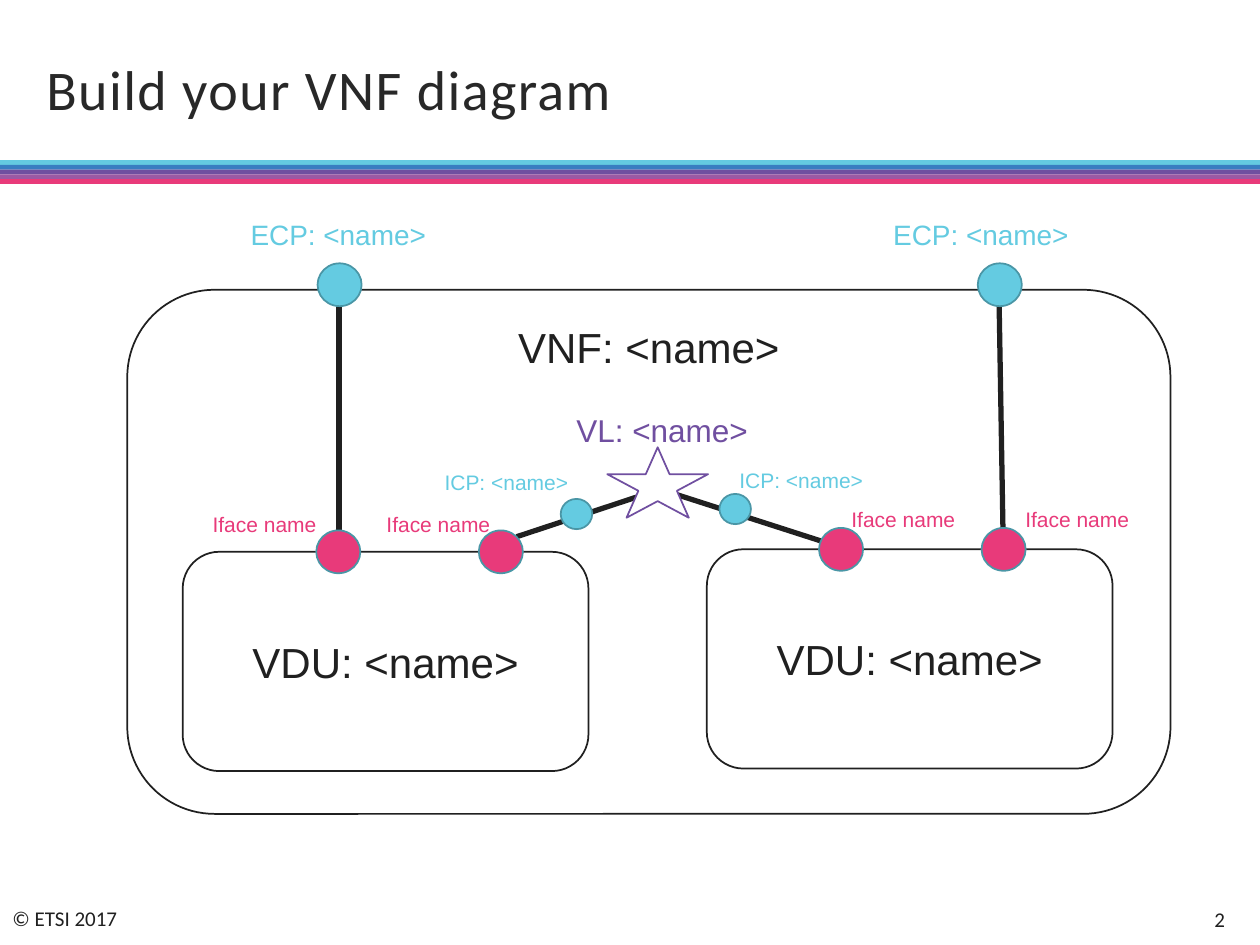
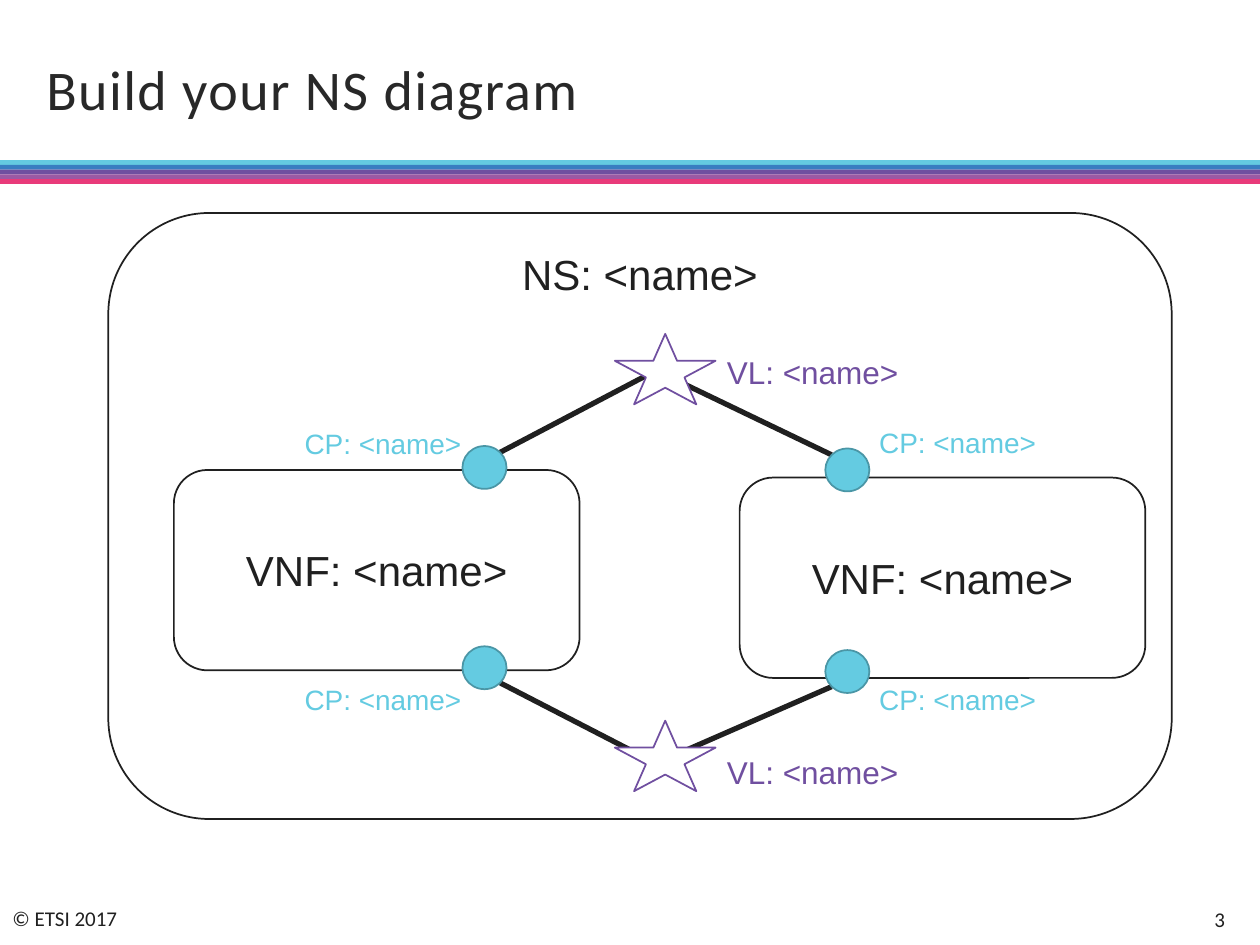
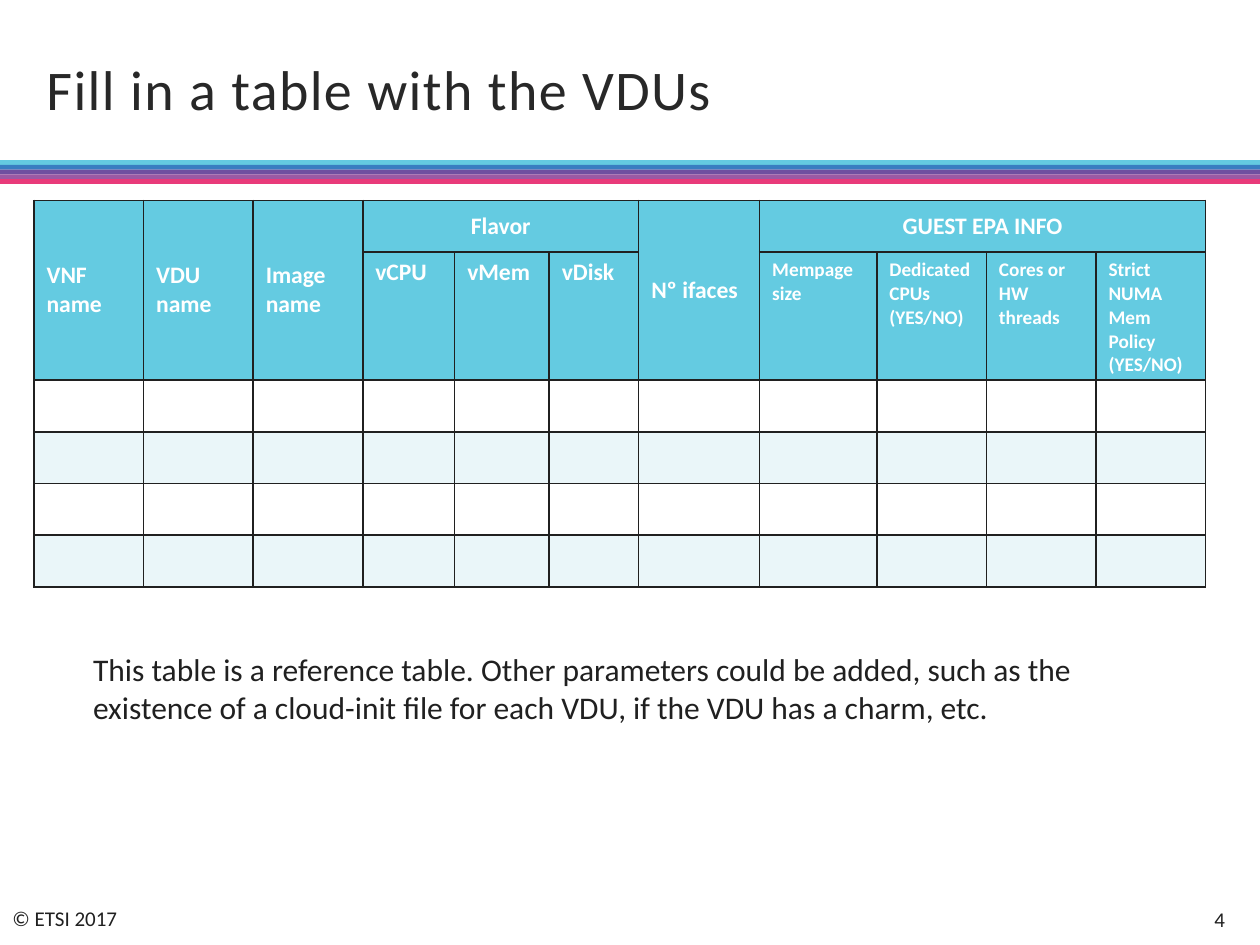
from dataclasses import dataclass

from lxml import etree
from pptx import Presentation
from pptx.dml.color import RGBColor
from pptx.enum.shapes import MSO_CONNECTOR, MSO_SHAPE
from pptx.enum.text import MSO_ANCHOR, PP_ALIGN
from pptx.oxml.ns import qn
from pptx.util import Inches, Pt

LEFT, CENTER, RIGHT = PP_ALIGN.LEFT, PP_ALIGN.CENTER, PP_ALIGN.RIGHT
TOP, MIDDLE = MSO_ANCHOR.TOP, MSO_ANCHOR.MIDDLE
RECTANGLE, ROUNDED = MSO_SHAPE.RECTANGLE, MSO_SHAPE.ROUNDED_RECTANGLE
OVAL, STAR = MSO_SHAPE.OVAL, MSO_SHAPE.STAR_5_POINT
STRAIGHT = MSO_CONNECTOR.STRAIGHT


@dataclass(frozen=True)
class Theme:
    ink: str = "202020"
    title_ink: str = "282828"
    white: str = "FFFFFF"
    cyan: str = "64CBE1"
    cyan_edge: str = "4A96A6"
    blue: str = "397EC1"
    violet: str = "704FA0"
    orchid: str = "9B59A4"
    pink: str = "E83A7A"
    stripe: str = "EAF6F9"
    heading_font: str = "Calibri"
    diagram_font: str = "Arial"
    title: float = 32
    name: float = 24
    body: float = 18
    point: float = 16
    header: float = 13.5
    small: float = 12
    detail: float = 11
    thin: float = 1
    thick: float = 3


THEME = Theme()


@dataclass(frozen=True)
class Box:
    left: float
    top: float
    width: float
    height: float

    def inside(self, left, top, width, height):
        return Box(self.left + left, self.top + top, width, height)

    def lengths(self):
        return [Inches(v) for v in (self.left, self.top, self.width, self.height)]


def style(size, color=THEME.ink, name=THEME.diagram_font, bold=False):
    return {"size": Pt(size), "name": name, "bold": bold, "color": color}


NAME = style(THEME.name)
LINK_NAME = style(THEME.body, THEME.violet)
POINT_NAME = style(THEME.point, THEME.cyan)
INNER_NAME = style(THEME.small, THEME.cyan)
IFACE_NAME = style(THEME.small, THEME.pink)
TITLE = style(THEME.title, THEME.title_ink, THEME.heading_font)
FOOTER = style(THEME.small, name=THEME.heading_font)
BODY = style(THEME.body, name=THEME.heading_font)
HEADER = style(THEME.header, THEME.white, THEME.heading_font, True)
DETAIL = style(THEME.detail, THEME.white, THEME.heading_font, True)

PORT = (0.35, 0.34)
DOT = (0.25, 0.24)
STAR_SIZE = (0.8, 0.56)
IFACE_LABEL = (1.5, 0.3)
CP_LABEL = (1.72, 0.37)


def write(frame, text, look, align=LEFT):
    for index, line in enumerate(text.split("\n")):
        para = frame.add_paragraph() if index else frame.paragraphs[0]
        para.alignment = align
        span = para.add_run()
        span.text = line
        for key, value in look.items():
            if key == "color":
                span.font.color.rgb = RGBColor.from_string(value)
            else:
                setattr(span.font, key, value)
    return frame.paragraphs[0]


def add_label(page, box, text, look, align=CENTER, anchor=TOP, wrap=True):
    frame = page.shapes.add_textbox(*box.lengths()).text_frame
    for key, value in {"word_wrap": wrap, "vertical_anchor": anchor}.items():
        setattr(frame, key, value)
    return write(frame, text, look, align)


def add_figure(page, kind, box, fill, edge=None):
    figure = page.shapes.add_shape(kind, *box.lengths())
    figure.shadow.inherit = False
    figure.fill.solid()
    figure.fill.fore_color.rgb = RGBColor.from_string(fill)
    if edge:
        figure.line.color.rgb = RGBColor.from_string(edge)
        figure.line.width = Pt(THEME.thin)
    else:
        figure.line.fill.background()
    return figure


def add_named_box(page, box, name, anchor=MIDDLE):
    frame = add_figure(page, ROUNDED, box, THEME.white, THEME.ink).text_frame
    frame.vertical_anchor = anchor
    write(frame, name, NAME, CENTER)


def add_link(page, box, start, end):
    points = [Inches(v) for x, y in (start, end) for v in (box.left + x, box.top + y)]
    link = page.shapes.add_connector(STRAIGHT, *points)
    link.line.color.rgb = RGBColor.from_string(THEME.ink)
    link.line.width = Pt(THEME.thick)
    etree.SubElement(link._element.spPr, qn("a:effectLst"))


def add_circle(page, box, place, size, color):
    add_figure(page, OVAL, box.inside(*place, *size), color, THEME.cyan_edge)


def add_star(page, box, place):
    add_figure(page, STAR, box.inside(*place, *STAR_SIZE), THEME.white, THEME.violet)


def draw_network(page, box, name, links, stars):
    add_named_box(page, box, name, TOP)
    for start, end in links:
        add_link(page, box, start, end)
    for place in stars:
        add_star(page, box, place)


def draw_vdu(page, box, port_lefts, label_lefts, label_top):
    add_named_box(page, box, "VDU: <name>")
    for port_left, label_left in zip(port_lefts, label_lefts):
        add_circle(page, box, (port_left, -0.17), PORT, THEME.pink)
        add_label(page, box.inside(label_left, label_top, *IFACE_LABEL),
                  "Iface name", IFACE_NAME)


def draw_vnf(page, box, port_left, port_tops, label_left, label_tops):
    add_named_box(page, box, "VNF: <name>")
    for port_top, label_top in zip(port_tops, label_tops):
        add_circle(page, box, (port_left, port_top), PORT, THEME.cyan)
        add_label(page, box.inside(label_left, label_top, *CP_LABEL),
                  "CP: <name>", POINT_NAME)


def draw_vnf_diagram(page, box):
    links = [((1.68, 1.91), (1.68, 0.13)), ((6.95, 1.89), (6.92, 0.13)),
             ((3.09, 1.96), (4.21, 1.59)), ((5.65, 2.04), (4.25, 1.59))]
    draw_network(page, box, "VNF: <name>", links, [(3.81, 1.25)])
    draw_vdu(page, box.inside(0.44, 2.08, 3.22, 1.74), (1.06, 2.35), (-0.1, 1.28), -0.37)
    draw_vdu(page, box.inside(4.6, 2.06, 3.22, 1.74), (0.89, 2.18), (0.81, 2.19), -0.39)
    add_label(page, box.inside(2.79, 0.91, 2.91, 0.4), "VL: <name>", LINK_NAME)
    for port_left, label_left in ((1.51, 0.73), (6.75, 5.83)):
        add_circle(page, box, (port_left, -0.21), PORT, THEME.cyan)
        add_label(page, box.inside(label_left, -0.62, 1.89, 0.37),
                  "ECP: <name>", POINT_NAME)
    for dot, label in (((3.44, 1.66), (2.42, 1.38)), ((4.7, 1.62), (4.76, 1.36))):
        add_circle(page, box, dot, DOT, THEME.cyan)
        add_label(page, box.inside(*label, 1.19, 0.3),
                  "ICP: <name>", INNER_NAME, LEFT, wrap=False)


def draw_ns_diagram(page, box):
    links = [((3.11, 1.9), (4.29, 1.28)), ((5.74, 1.92), (4.45, 1.3)),
             ((3.11, 3.73), (4.37, 4.38)), ((5.74, 3.76), (4.48, 4.31))]
    draw_network(page, box, "NS: <name>", links, [(4.02, 0.96), (4.02, 4.03)])
    draw_vnf(page, box.inside(0.52, 2.04, 3.22, 1.59),
             2.29, (-0.19, 1.4), 0.8, (-0.39, 1.64))
    draw_vnf(page, box.inside(5.01, 2.1, 3.22, 1.59),
             0.68, (-0.23, 1.37), 0.87, (-0.46, 1.58))
    for top in (1.06, 4.24):
        add_label(page, box.inside(4.81, top, 2.91, 0.4), "VL: <name>", LINK_NAME, LEFT)


def format_cell(cell, fill):
    properties = cell._tc.get_or_add_tcPr()
    for index, side in enumerate(("lnL", "lnR", "lnT", "lnB")):
        border = etree.Element(qn(f"a:{side}"), w=str(Pt(THEME.thin)))
        paint = etree.SubElement(border, qn("a:solidFill"))
        etree.SubElement(paint, qn("a:srgbClr"), val=THEME.ink)
        properties.insert(index, border)
    cell.fill.solid()
    cell.fill.fore_color.rgb = RGBColor.from_string(fill)


def draw_vdu_table(page, box):
    widths = [0.87] * 3 + [0.73, 0.75, 0.71, 0.96, 0.93] + [0.87] * 3
    row_count, header_rows = 6, 2
    table = page.shapes.add_table(row_count, len(widths), *box.lengths()).table
    for column, width in zip(table.columns, widths):
        column.width = Inches(width)
    for index, row in enumerate(table.rows):
        row.height = Inches(0.41)
        body_fill = THEME.stripe if index % 2 else THEME.white
        for cell in row.cells:
            format_cell(cell, THEME.cyan if index < header_rows else body_fill)
    merged = [("VNF name", 0, 1, 0), ("VDU name", 1, 1, 1), ("Image name", 2, 1, 2),
              ("Flavor", 3, 0, 5), ("Nº ifaces", 6, 1, 6), ("GUEST EPA INFO", 7, 0, 10)]
    for text, first, last_row, last in merged:
        cell = table.cell(0, first)
        cell.merge(table.cell(last_row, last))
        cell.vertical_anchor = MIDDLE
        write(cell.text_frame, text, HEADER, CENTER if last > first else LEFT)
    groups = [(3, HEADER, ["vCPU", "vMem", "vDisk"]),
              (7, DETAIL, ["Mempage size", "Dedicated CPUs (YES/NO)", "Cores or HW threads",
                           "Strict NUMA Mem Policy\n(YES/NO)"])]
    for first, look, texts in groups:
        for column, text in enumerate(texts, first):
            write(table.cell(1, column).text_frame, text, look)


def draw_table_page(page, box):
    draw_vdu_table(page, box)
    add_label(page, box.inside(0.37, 3.52, 8.11, 0.71),
              "This table is a reference table. Other parameters could be added, such as the "
              "existence of a cloud-init file for each VDU, if the VDU has a charm, etc.",
              BODY, LEFT)


def draw_bands(page, box):
    colors = (THEME.cyan, THEME.blue, THEME.violet, THEME.orchid, THEME.pink)
    step = box.height / len(colors)
    for index, color in enumerate(colors):
        add_figure(page, RECTANGLE, box.inside(0, index * step, box.width, step), color)


def add_page(deck, title, number):
    page = deck.slides.add_slide(deck.slide_layouts[6])
    draw_bands(page, Box(0, 1.27, 10, 0.19))
    add_label(page, Box(0, 7.14, 1.11, 0.3), "© ETSI 2017", FOOTER, LEFT)
    para = add_label(page, Box(0.27, 0.3, 7.41, 0.87), title, TITLE, LEFT, MIDDLE)
    para.line_spacing = 0.9
    para.runs[0]._r.get_or_add_rPr().set("spc", "80")
    add_label(page, Box(9.29, 7.1, 0.53, 0.39), str(number), FOOTER, RIGHT, MIDDLE)
    return page


def main():
    deck = Presentation()
    deck.slide_width, deck.slide_height = Inches(10), Inches(7.5)
    pages = [
        ("Build your VNF diagram", draw_vnf_diagram, Box(1.01, 2.3, 8.28, 4.16)),
        ("Build your NS diagram", draw_ns_diagram, Box(0.86, 1.69, 8.44, 4.81)),
        ("Fill in a table with the VDUs", draw_table_page, Box(0.27, 1.59, 9.33, 3.04)),
    ]
    for number, (title, draw, box) in enumerate(pages, 2):
        draw(add_page(deck, title, number), box)
    deck.save("out.pptx")


if __name__ == "__main__":
    main()
